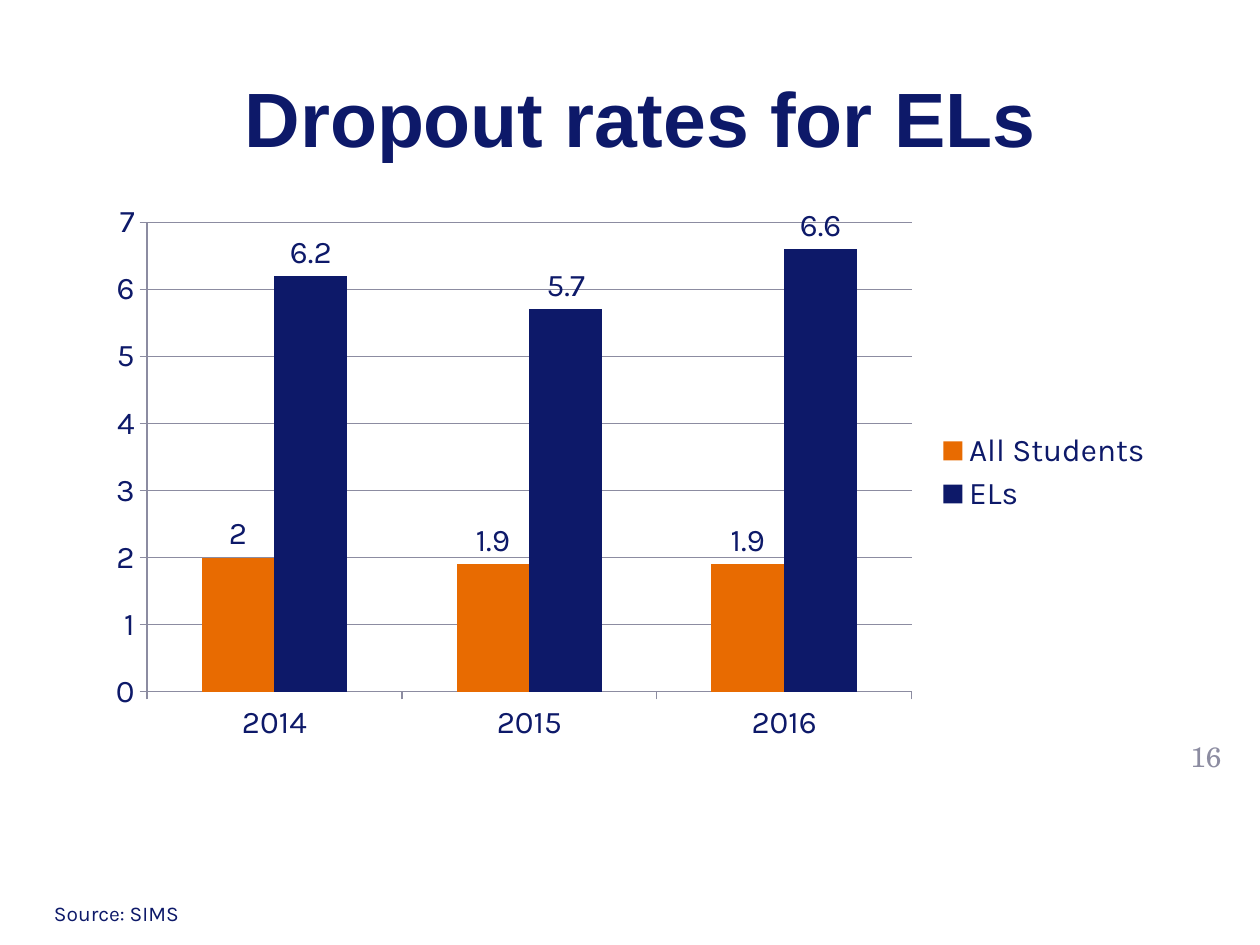
from lxml import etree
from pptx import Presentation
from pptx.chart.data import CategoryChartData
from pptx.dml.color import RGBColor
from pptx.enum import chart as charts, text
from pptx.util import Inches, Pt

NAVY = RGBColor(0x0D, 0x19, 0x69)
ORANGE = RGBColor(0xE8, 0x6B, 0x01)
GRAY = RGBColor(0x8C, 0x8C, 0xA1)


def set_font(font, name, size, color, bold=False):
    font.name = name
    font.size = Pt(size)
    font.bold = bold
    font.color.rgb = color


def write_line(box, words, alignment, anchor, **style):
    frame = box.text_frame
    frame.word_wrap = True
    frame.vertical_anchor = anchor
    para = frame.paragraphs[0]
    para.alignment = alignment
    span = para.add_run()
    span.text = words
    set_font(span.font, **style)


deck = Presentation()
deck.slide_width, deck.slide_height = Inches(10), Inches(7.5)
page = deck.slides.add_slide(deck.slide_layouts[5])

# Slide number
number = page.shapes.add_textbox(Inches(9.28), Inches(5.75), Inches(0.58), Inches(0.5))
write_line(number, "16", text.PP_ALIGN.CENTER, text.MSO_ANCHOR.MIDDLE,
           name="TeX Gyre Schola", size=16, color=GRAY)

# Title
title = page.shapes.title
title.left, title.top = Inches(0.5), Inches(0.3)
title.width, title.height = Inches(9), Inches(1.25)
write_line(title, " Dropout rates for ELs", text.PP_ALIGN.CENTER, text.MSO_ANCHOR.MIDDLE,
           name="Arial", size=44, color=NAVY, bold=True)

# Dropout chart
rates = CategoryChartData()
rates.categories = ["2014", "2015", "2016"]
rates.add_series("All Students", [2, 1.9, 1.9])
rates.add_series("ELs", [6.2, 5.7, 6.6])
chart = page.shapes.add_chart(
    charts.XL_CHART_TYPE.COLUMN_CLUSTERED,
    Inches(0.75), Inches(1.53), Inches(8.5), Inches(4.44), rates).chart
set_font(chart.font, "Karla", 18, NAVY)
chart.has_title = False
chart.has_legend = True
chart.legend.position = charts.XL_LEGEND_POSITION.RIGHT
chart.legend.include_in_layout = False

# Axes and gridlines
chart.value_axis.minimum_scale = 0
chart.value_axis.maximum_scale = 7
chart.value_axis.major_unit = 1
chart.value_axis.has_major_gridlines = True
for part in (chart.category_axis, chart.value_axis, chart.value_axis.major_gridlines):
    part.format.line.color.rgb = GRAY
    part.format.line.width = Pt(0.75)
for axis in (chart.category_axis, chart.value_axis):
    axis.major_tick_mark = charts.XL_TICK_MARK.OUTSIDE

# Columns and value labels
plot = chart.plots[0]
plot.vary_by_categories = False
plot.gap_width = 150
plot.overlap = 0
for series, color in zip(plot.series, (ORANGE, NAVY)):
    series.format.fill.solid()
    series.format.fill.fore_color.rgb = color
    labels = series.data_labels
    labels.show_value = True
    labels.position = charts.XL_LABEL_POSITION.OUTSIDE_END
    set_font(labels.font, "Karla", 18, NAVY)

# Source line
source = page.shapes.add_textbox(Inches(0.33), Inches(7.1), Inches(4.92), Inches(0.3))
write_line(source, "Source: SIMS", text.PP_ALIGN.LEFT, text.MSO_ANCHOR.TOP,
           name="Karla", size=12, color=NAVY)
source.text_frame.auto_size = text.MSO_AUTO_SIZE.SHAPE_TO_FIT_TEXT

deck.save("out.pptx")
